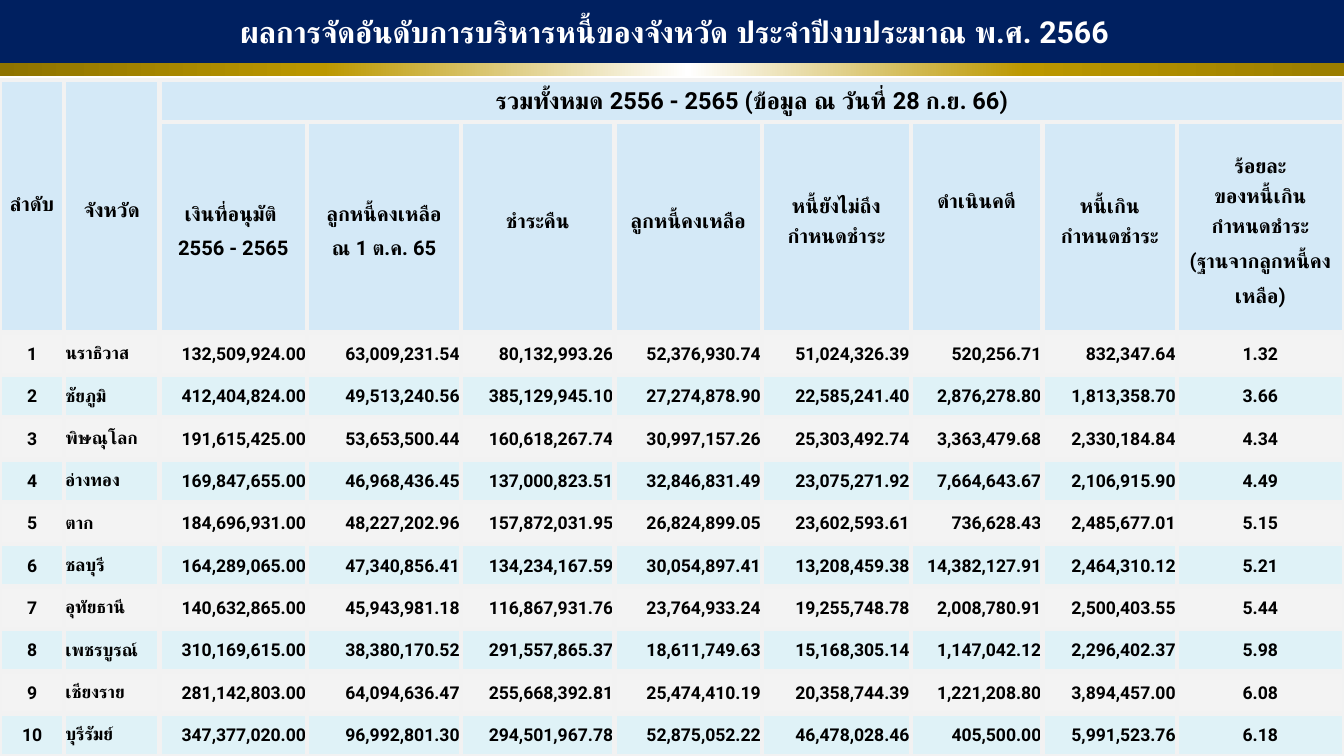
"""Build a slide ranking ten provinces by debt management in fiscal year 2566."""
from lxml import etree
from pptx import Presentation
from pptx.dml.color import RGBColor
from pptx.enum.shapes import MSO_SHAPE
from pptx.enum.text import MSO_ANCHOR, MSO_AUTO_SIZE, PP_ALIGN
from pptx.oxml import parse_xml
from pptx.oxml.ns import nsdecls, qn
from pptx.util import Inches, Pt

NAVY = RGBColor(0x00, 0x20, 0x60)
WHITE = RGBColor(0xFF, 0xFF, 0xFF)
BLACK = RGBColor(0x00, 0x00, 0x00)
HEADER_BLUE = RGBColor(0xCA, 0xE4, 0xF6)
BAND_BLUE = RGBColor(0xD7, 0xEF, 0xF5)
GRAY = RGBColor(0xF2, 0xF2, 0xF2)
GOLD_STOPS = [
    (0, RGBColor(0x8E, 0x73, 0x00)),
    (24, RGBColor(0xBC, 0x98, 0x00)),
    (51, WHITE),
    (76, RGBColor(0xBC, 0x98, 0x00)),
    (100, RGBColor(0x9A, 0x7D, 0x00)),
]
FONT = "Roboto"
LEFT, CENTER, RIGHT = PP_ALIGN.LEFT, PP_ALIGN.CENTER, PP_ALIGN.RIGHT

COL_WIDTHS = [0.53, 0.79, 1.22, 1.27, 1.27, 1.22, 1.23, 1.09, 1.11, 1.38]
ROW_HEIGHTS = [0.35, 1.74] + [0.35] * 10
BODY_ALIGN = [CENTER, LEFT] + [RIGHT] * 7 + [CENTER]

# row, column, text, size, line spacing, bottom margin
HEADERS = [
    (0, 0, "ลำดับ", 12, 1.5, 0.1),
    (0, 1, "จังหวัด", 12, 1.5, 0),
    (0, 2, "รวมทั้งหมด 2556 - 2565 (ข้อมูล ณ วันที่ 28 ก.ย. 66)", 14, 1, 0),
    (1, 2, "เงินที่อนุมัติ \v2556 - 2565", 12, 1.5, 0),
    (1, 3, "ลูกหนี้คงเหลือ\nณ 1 ต.ค. 65", 12, 1.5, 0),
    (1, 4, "ชำระคืน", 12, 1.5, 0.18),
    (1, 5, "ลูกหนี้คงเหลือ", 12, 1.5, 0.18),
    (1, 6, "หนี้ยังไม่ถึง\vกำหนดชำระ", 12, 1.5, 0.18),
    (1, 7, "ดำเนินคดี", 12, 1, 0.42),
    (1, 8, "หนี้เกิน\vกำหนดชำระ", 12, 1.5, 0.18),
    (1, 9, "ร้อยละ\vของหนี้เกิน\vกำหนดชำระ\v(ฐานจากลูกหนี้คงเหลือ)", 12, 1.5, 0),
]
PROVINCES = [
    "นราธิวาส 132,509,924.00 63,009,231.54 80,132,993.26 52,376,930.74 51,024,326.39 520,256.71 832,347.64 1.32",
    "ชัยภูมิ 412,404,824.00 49,513,240.56 385,129,945.10 27,274,878.90 22,585,241.40 2,876,278.80 1,813,358.70 3.66",
    "พิษณุโลก 191,615,425.00 53,653,500.44 160,618,267.74 30,997,157.26 25,303,492.74 3,363,479.68 2,330,184.84 4.34",
    "อ่างทอง 169,847,655.00 46,968,436.45 137,000,823.51 32,846,831.49 23,075,271.92 7,664,643.67 2,106,915.90 4.49",
    "ตาก 184,696,931.00 48,227,202.96 157,872,031.95 26,824,899.05 23,602,593.61 736,628.43 2,485,677.01 5.15",
    "ชลบุรี 164,289,065.00 47,340,856.41 134,234,167.59 30,054,897.41 13,208,459.38 14,382,127.91 2,464,310.12 5.21",
    "อุทัยธานี 140,632,865.00 45,943,981.18 116,867,931.76 23,764,933.24 19,255,748.78 2,008,780.91 2,500,403.55 5.44",
    "เพชรบูรณ์ 310,169,615.00 38,380,170.52 291,557,865.37 18,611,749.63 15,168,305.14 1,147,042.12 2,296,402.37 5.98",
    "เชียงราย 281,142,803.00 64,094,636.47 255,668,392.81 25,474,410.19 20,358,744.39 1,221,208.80 3,894,457.00 6.08",
    "บุรีรัมย์ 347,377,020.00 96,992,801.30 294,501,967.78 52,875,052.22 46,478,028.46 405,500.00 5,991,523.76 6.18",
]


def write(tf, text, size, color, align, spacing=1):
    tf.text = text
    for p in tf.paragraphs:
        p.alignment = align
        p.line_spacing = spacing
        p.font.name = FONT
        p.font.size = Pt(size)
        p.font.bold = True
        p.font.color.rgb = color


def paint_cell(cell, color, opacity):
    cell.fill.solid()
    cell.fill.fore_color.rgb = color
    tcPr = cell._tc.get_or_add_tcPr()
    clr = tcPr.find(".//" + qn("a:srgbClr"))
    etree.SubElement(clr, qn("a:alpha"), val=str(opacity * 1000))
    for i, side in enumerate(["lnL", "lnR", "lnT", "lnB"]):
        tcPr.insert(i, parse_xml(
            f'<a:{side} {nsdecls("a")} w="{Pt(3)}"><a:solidFill>'
            f'<a:srgbClr val="{GRAY}"/></a:solidFill></a:{side}>'))


prs = Presentation()
prs.slide_width, prs.slide_height = Inches(11.11), Inches(6.25)
s = prs.slides.add_slide(prs.slide_layouts[5])

frame = s.shapes.add_table(len(ROW_HEIGHTS), len(COL_WIDTHS), Inches(0),
                           Inches(0.66), Inches(11.1), Inches(5.59))
table = frame.table
table.first_row = table.horz_banding = False
for col, width in zip(table.columns, COL_WIDTHS):
    col.width = Inches(width)
for row, height in zip(table.rows, ROW_HEIGHTS):
    row.height = Inches(height)

for i, row in enumerate(table.rows):
    if i < 2:
        fill, opacity = HEADER_BLUE, 80
        values = [""] * len(COL_WIDTHS)
    else:
        fill, opacity = (BAND_BLUE, 80) if i % 2 else (GRAY, 90)
        values = [str(i - 1)] + PROVINCES[i - 2].split()
    for cell, value, align in zip(row.cells, values, BODY_ALIGN):
        cell.margin_left = cell.margin_right = cell.margin_top = Inches(0.01)
        cell.margin_bottom = Inches(0)
        cell.vertical_anchor = MSO_ANCHOR.MIDDLE
        write(cell.text_frame, value, 10.5, BLACK, align)
        paint_cell(cell, fill, opacity)

for i, j, text, size, spacing, bottom in HEADERS:
    cell = table.cell(i, j)
    cell.margin_bottom = Inches(bottom)
    write(cell.text_frame, text, size, BLACK, CENTER, spacing)
for j in range(2):
    table.cell(0, j).merge(table.cell(1, j))
table.cell(0, 2).merge(table.cell(0, 9))

bar = s.shapes.add_shape(MSO_SHAPE.RECTANGLE, Inches(0), Inches(0),
                         Inches(11.15), Inches(0.63))
bar.shadow.inherit = False
bar.line.fill.background()
bar.fill.gradient()
bar.fill.gradient_angle = 0
gsLst = bar._element.spPr.find(".//" + qn("a:gsLst"))
for gs in list(gsLst):
    gsLst.remove(gs)
for pos, color in GOLD_STOPS:
    gs = etree.SubElement(gsLst, qn("a:gs"), pos=str(pos * 1000))
    etree.SubElement(gs, qn("a:srgbClr"), val=str(color))

title = s.shapes.title
title.left, title.top = Inches(0), Inches(0)
title.width, title.height = Inches(11.15), Inches(0.52)
title.fill.solid()
title.fill.fore_color.rgb = NAVY
tf = title.text_frame
tf.auto_size = MSO_AUTO_SIZE.NONE
tf.vertical_anchor = MSO_ANCHOR.MIDDLE
write(tf, "ผลการจัดอันดับการบริหารหนี้ของจังหวัด ประจำปีงบประมาณ พ.ศ. 2566", 18, WHITE, CENTER)
s.shapes._spTree.append(title._element)

prs.save("out.pptx")
